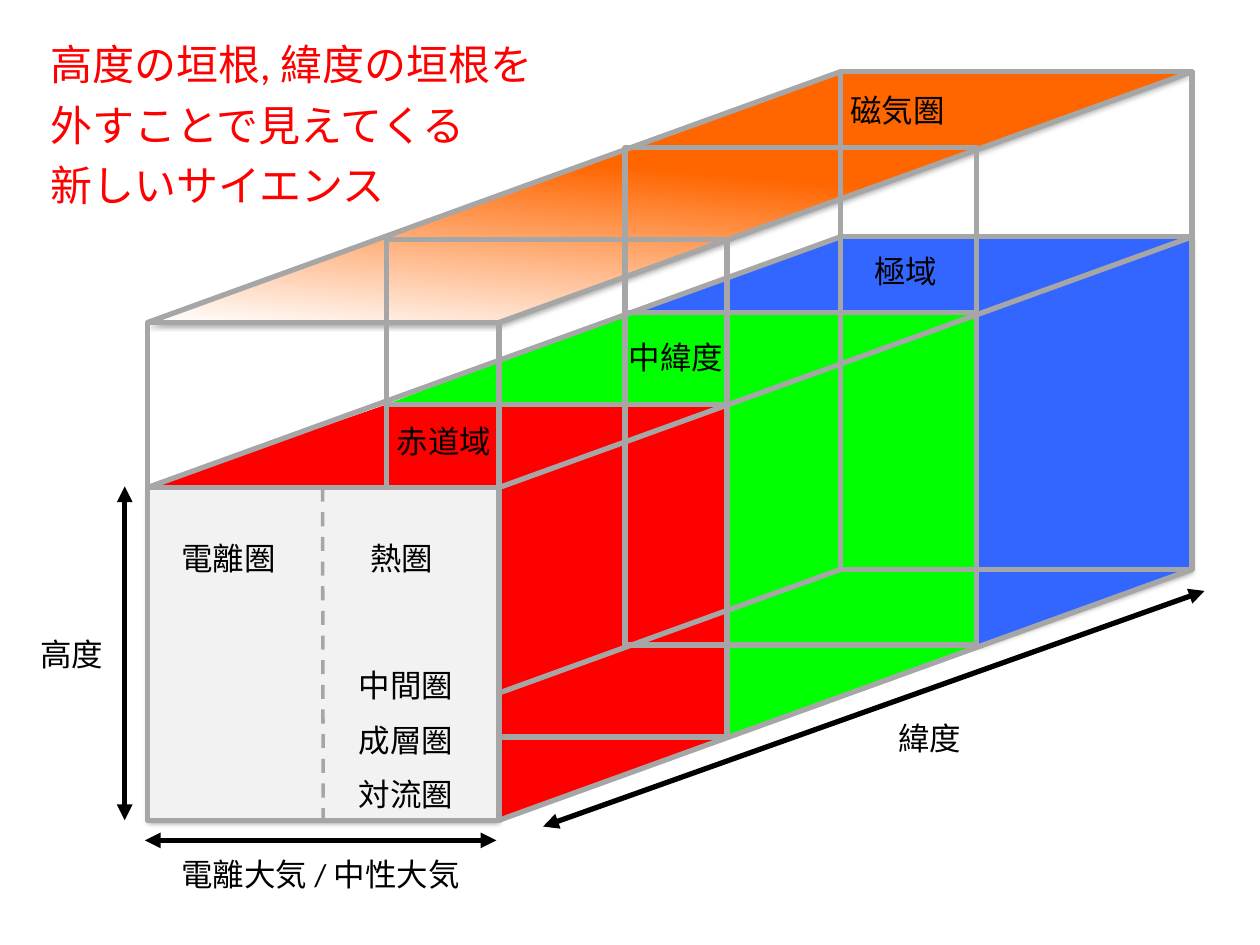
from lxml import etree
from pptx import Presentation
from pptx.dml.color import RGBColor
from pptx.enum.dml import MSO_LINE
from pptx.enum.shapes import MSO_CONNECTOR, MSO_SHAPE
from pptx.enum.text import MSO_AUTO_SIZE
from pptx.oxml import parse_xml
from pptx.oxml.ns import nsdecls, qn
from pptx.util import Pt

STRAIGHT, RECT, DASH = MSO_CONNECTOR.STRAIGHT, MSO_SHAPE.RECTANGLE, MSO_LINE.DASH
FIT = MSO_AUTO_SIZE.SHAPE_TO_FIT_TEXT
COLS, ROWS = 1000, 750
CELL = 9144
FONT = "Calibri"
COLORS = {"red": "FF0000", "green": "00FF00", "blue": "3366FF", "orange": "FF6600",
          "white": "FFFFFF", "pale": "F2F2F2", "edge": "A6A6A6", "black": "000000"}

TITLE = ["高度の垣根, 緯度の垣根を", "外すことで見えてくる", "新しいサイエンス"]
TITLE_BOX = (30, 18, 441, 154)
SLICES = [(117, 396, 256), (307, 577, 190), (496, 775, 117), (667, 946, 57)]
LEVELS = {"roof": 0, "deck": 131, "floor": 395}
ZONES = ["red", "green", "blue"]
LABELS = [
    ("高度", 22, 499, 71), ("緯度", 703, 566, 71),
    ("赤道域", 305, 330, 96), ("中緯度", 489, 263, 96),
    ("極域", 684, 195, 71), ("磁気圏", 665, 67, 96),
    ("電離圏", 134, 423, 96), ("熱圏", 284, 423, 71),
    ("中間圏", 275, 524, 96), ("成層圏", 275, 567, 96), ("対流圏", 275, 610, 96),
]
AXIS_LABEL = ("電離大気 / 中性大気", 134, 674, 243)
AXES = [((99, 386), (99, 651)), ((956, 469), (431, 656)), ((394, 667), (115, 667))]


def rgb(name):
    return RGBColor.from_string(COLORS[name])


def corner(i, side, level):
    return SLICES[i][side], SLICES[i][2] + LEVELS[level]


def add_face(s, points, color, shadow=False):
    builder = s.shapes.build_freeform(*points[0], scale=CELL)
    builder.add_line_segments(points[1:], close=True)
    sp = builder.convert_to_shape()
    sp.shadow.inherit = False
    sp.fill.solid()
    sp.fill.fore_color.rgb = rgb(color)
    sp.line.fill.background()
    if shadow:
        effects = sp._element.spPr.find(qn("a:effectLst"))
        effects.append(parse_xml(
            f'<a:outerShdw {nsdecls("a")} blurRad="39370" dist="22860" dir="5400000" '
            'rotWithShape="0"><a:srgbClr val="000000"><a:alpha val="35000"/>'
            '</a:srgbClr></a:outerShdw>'))
    return sp


def add_line(s, start, end, color="edge", width=3, arrows=False):
    c = s.shapes.add_connector(STRAIGHT, *(v * CELL for v in start + end))
    c.line.color.rgb = rgb(color)
    c.line.width = Pt(width)
    if arrows:
        ln = c.line._get_or_add_ln()
        for tag in ("a:headEnd", "a:tailEnd"):
            etree.SubElement(ln, qn(tag)).set("type", "triangle")
    etree.SubElement(c._element.spPr, qn("a:effectLst"))
    return c


def add_frame(s, i, level):
    left, top = corner(i, 0, level)
    right, bottom = corner(i, 1, "floor")
    sp = s.shapes.add_shape(RECT, *(v * CELL for v in (left, top, right - left, bottom - top)))
    sp.shadow.inherit = False
    sp.fill.background()
    sp.line.color.rgb = rgb("edge")
    sp.line.width = Pt(3)
    return sp


def add_text(s, lines, box, size=18, color="black", wrap=False, spacing=None):
    tf = s.shapes.add_textbox(*(v * CELL for v in box)).text_frame
    tf.text = "\n".join(lines)
    tf.word_wrap = wrap
    tf.auto_size = FIT
    for p in tf.paragraphs:
        p.line_spacing = spacing
        for r in p.runs:
            r.font.size = Pt(size)
            r.font.name = FONT
            r.font.color.rgb = rgb(color)


def strip(first, last, a, b):
    """Corners of the face between two slices, bounded by two (side, level) edges."""
    return [corner(first, *a), corner(last, *a), corner(last, *b), corner(first, *b)]


def draw_box(s):
    last = len(SLICES) - 1
    for i, color in reversed(list(enumerate(ZONES))):
        add_face(s, strip(i, i + 1, (1, "deck"), (1, "floor")), color, color == "blue")
    roof = add_face(s, strip(0, last, (0, "roof"), (1, "roof")), "orange", True)
    roof.fill.gradient()
    roof.fill.gradient_angle = 85
    for stop, color, position in zip(roof.fill.gradient_stops, ("white", "orange"), (0, 0.58)):
        stop.color.rgb = rgb(color)
        stop.position = position
    for i, color in enumerate(ZONES):
        add_face(s, strip(i, i + 1, (0, "deck"), (1, "deck")), color)
    for level in LEVELS:
        for side in (0, 1):
            add_line(s, corner(0, side, level), corner(last, side, level))
    for i in range(last, 0, -1):
        add_frame(s, i, "roof")
        add_line(s, corner(i, 0, "deck"), corner(i, 1, "deck"))
    add_face(s, [corner(0, 0, "deck"), corner(0, 1, "deck"),
                 corner(0, 1, "floor"), corner(0, 0, "floor")], "pale", True)
    front = add_frame(s, 0, "roof")
    add_line(s, corner(0, 0, "deck"), corner(0, 1, "deck"))
    middle = (SLICES[0][0] + SLICES[0][1]) // 2
    divider = add_line(s, (middle, corner(0, 0, "deck")[1]),
                       (middle, corner(0, 0, "floor")[1]), width=2)
    divider.line.dash_style = DASH
    divider.end_connect(front, 2)


def main():
    prs = Presentation()
    prs.slide_width, prs.slide_height = COLS * CELL, ROWS * CELL
    s = prs.slides.add_slide(prs.slide_layouts[6])
    draw_box(s)
    for start, end in AXES:
        add_line(s, start, end, "black", arrows=True)
    for label in LABELS + [AXIS_LABEL]:
        text, left, top, width = label
        add_text(s, [text], (left, top, width, 40), wrap=label is AXIS_LABEL)
    add_text(s, TITLE, TITLE_BOX, 24, "red", True, 1.2)
    prs.save("out.pptx")


if __name__ == "__main__":
    main()
